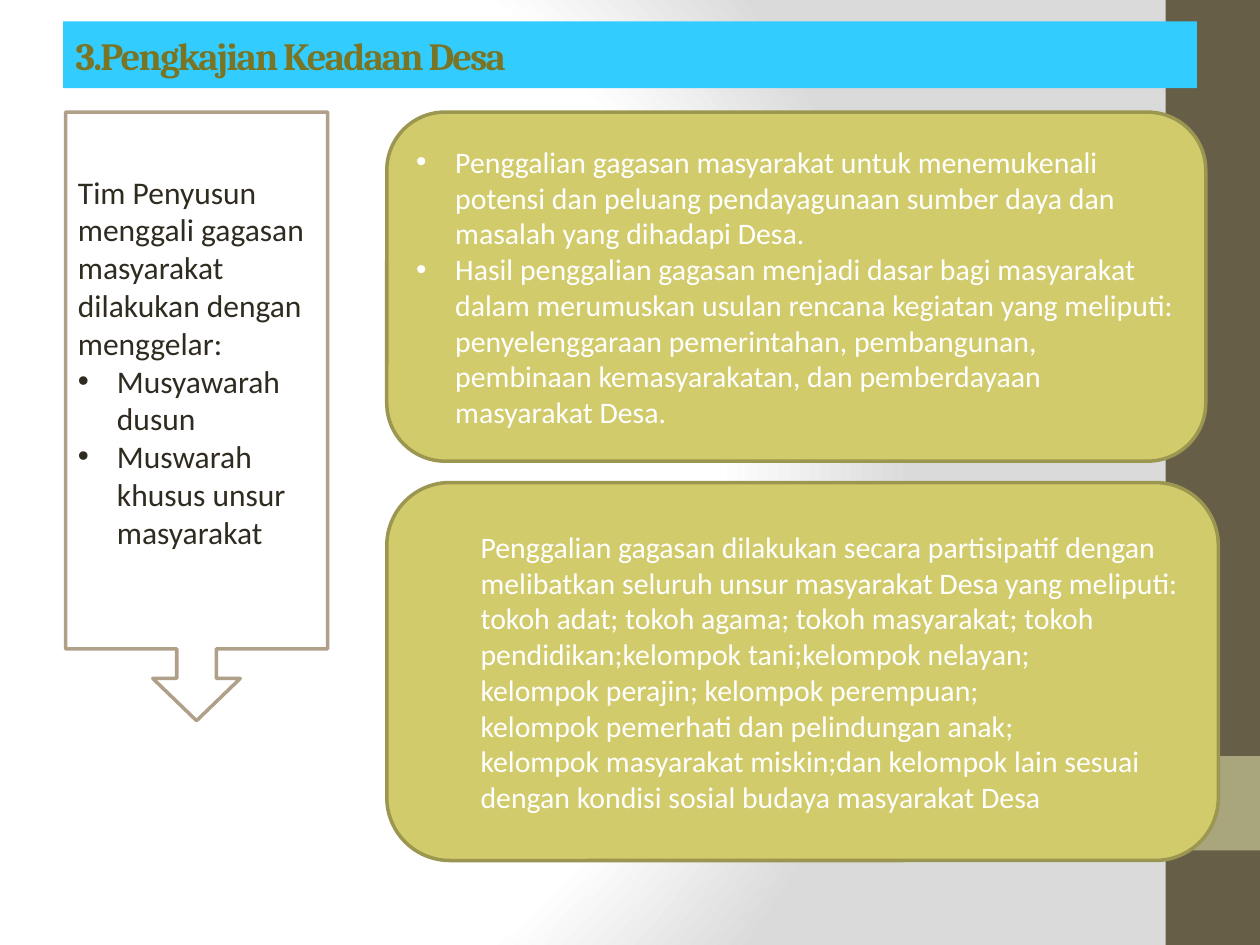
from dataclasses import dataclass

import lxml.etree
import pptx
import pptx.dml.color
import pptx.enum.shapes
import pptx.enum.text
import pptx.oxml
import pptx.oxml.ns
import pptx.util

Inches = pptx.util.Inches
Pt = pptx.util.Pt
SHAPES = pptx.enum.shapes.MSO_SHAPE
qn = pptx.oxml.ns.qn


@dataclass(frozen=True)
class Theme:
    title_font: str = "Cambria"
    body_font: str = "Calibri"
    title_size: int = 22
    callout_size: int = 18
    card_size: int = 17
    title_text: str = "7A7425"
    title_fill: str = "33CCFF"
    side_band: str = "675E47"
    side_block: str = "A9A57C"
    dark: str = "2F2B20"
    white: str = "FFFFFF"
    grey: str = "DADADA"
    callout_line: str = "B1A089"
    card_fill: str = "D2CB6C"
    card_line: str = "9B9650"


THEME = Theme()


@dataclass(frozen=True)
class Para:
    text: str
    bullet: bool = False
    level: int = 0
    indent: float = 0


@dataclass(frozen=True)
class Box:
    kind: int
    at: tuple[float, float, float, float]
    fill: str
    line: str | None = None
    paras: tuple[Para, ...] = ()
    size: int = 0
    color: str = ""
    adjust: tuple[float, ...] = ()
    bottom_inset: float = 0.05


BOXES = (
    Box(SHAPES.RECTANGLE, (9.25, 0, 0.75, 7.5), THEME.side_band),
    Box(SHAPES.RECTANGLE, (9.25, 6, 0.75, 0.75), THEME.side_block),
    Box(
        SHAPES.DOWN_ARROW_CALLOUT, (0.52, 0.89, 2.08, 4.83), THEME.white, THEME.callout_line,
        (
            Para("Tim Penyusun menggali gagasan masyarakat dilakukan dengan menggelar:"),
            Para("Musyawarah dusun", bullet=True),
            Para("Muswarah khusus unsur masyarakat", bullet=True),
        ),
        THEME.callout_size, THEME.dark, (0.151, 0.167, 0.161, 0.882), bottom_inset=0.35,
    ),
    Box(
        SHAPES.ROUNDED_RECTANGLE, (3.07, 0.89, 6.5, 2.77), THEME.card_fill, THEME.card_line,
        (
            Para("Penggalian gagasan masyarakat untuk menemukenali potensi dan peluang "
                 "pendayagunaan sumber daya dan masalah yang dihadapi Desa.", bullet=True),
            Para("Hasil penggalian gagasan menjadi dasar bagi masyarakat dalam merumuskan "
                 "usulan rencana kegiatan yang meliputi: penyelenggaraan pemerintahan, "
                 "pembangunan, pembinaan kemasyarakatan, dan pemberdayaan masyarakat Desa.",
                 bullet=True),
        ),
        THEME.card_size, THEME.white,
    ),
    Box(
        SHAPES.ROUNDED_RECTANGLE, (3.07, 3.83, 6.6, 3), THEME.card_fill, THEME.card_line,
        tuple(Para(text, level=1, indent=0.5) for text in (
            "Penggalian gagasan dilakukan secara partisipatif dengan melibatkan seluruh "
            "unsur masyarakat Desa yang meliputi: tokoh adat; tokoh agama; tokoh "
            "masyarakat; tokoh pendidikan;kelompok tani;kelompok nelayan;",
            "kelompok perajin; kelompok perempuan;",
            "kelompok pemerhati dan pelindungan anak;",
            "kelompok masyarakat miskin;dan kelompok lain sesuai dengan kondisi sosial "
            "budaya masyarakat Desa",
        )),
        THEME.card_size, THEME.white,
    ),
)


def rgb(value: str) -> pptx.dml.color.RGBColor:
    return pptx.dml.color.RGBColor.from_string(value)


def set_format(target, values: dict) -> None:
    for name, value in values.items():
        setattr(target, name, value)


def set_font(font, name: str, size: int, color: str, bold: bool = False) -> None:
    set_format(font, {"name": name, "size": Pt(size), "bold": bold})
    font.color.rgb = rgb(color)


def set_frame(tf, bottom_inset: float = 0.05) -> None:
    set_format(tf, {
        "word_wrap": True,
        "auto_size": pptx.enum.text.MSO_AUTO_SIZE.NONE,
        "vertical_anchor": pptx.enum.text.MSO_ANCHOR.MIDDLE,
        "margin_bottom": Inches(bottom_inset),
    })


def set_background(slide) -> None:
    """Fill the slide with a radial gradient, which needs XML."""
    slide.background.fill.solid()
    bg = slide._element.find(".//" + qn("p:bgPr"))
    stops = ((0, THEME.white), (75, THEME.white), (100, THEME.grey))
    stop_xml = "".join(
        f'<a:gs pos="{pos * 1000}"><a:srgbClr val="{color}"/></a:gs>' for pos, color in stops)
    gradient = pptx.oxml.parse_xml(
        f'<a:gradFill {pptx.oxml.ns.nsdecls("a")} rotWithShape="1"><a:gsLst>{stop_xml}</a:gsLst>'
        '<a:path path="circle"><a:fillToRect l="20000" t="50000" r="100000" b="50000"/></a:path>'
        '</a:gradFill>')
    bg.replace(bg.find(qn("a:solidFill")), gradient)


def add_paragraph_text(p, para: Para, box: Box) -> None:
    p.level = para.level
    p.alignment = pptx.enum.text.PP_ALIGN.LEFT
    pPr = p._p.get_or_add_pPr()
    if para.bullet:
        hang = Inches(0.31)
        pPr.set("marL", str(hang))
        pPr.set("indent", str(-hang))
        lxml.etree.SubElement(pPr, qn("a:buFont"), typeface="Arial")
        lxml.etree.SubElement(pPr, qn("a:buChar"), char="•")
    else:
        pPr.set("marL", str(Inches(para.indent)))
        pPr.set("indent", "0")
    r = p.add_run()
    r.text = para.text
    set_font(r.font, THEME.body_font, box.size, box.color)


def add_box(slide, box: Box) -> None:
    sp = slide.shapes.add_shape(box.kind, *map(Inches, box.at))
    sp.shadow.inherit = False
    sp.fill.solid()
    sp.fill.fore_color.rgb = rgb(box.fill)
    for i, value in enumerate(box.adjust):
        sp.adjustments[i] = value
    if box.line:
        sp.line.color.rgb = rgb(box.line)
        sp.line.width = Pt(2)
    else:
        sp.line.fill.background()
    tf = sp.text_frame
    set_frame(tf, box.bottom_inset)
    for i, para in enumerate(box.paras):
        p = tf.add_paragraph() if i else tf.paragraphs[0]
        add_paragraph_text(p, para, box)


def add_title(slide, text: str) -> None:
    sp = slide.shapes.title
    # Bring the title in front of the side band
    slide.shapes._spTree.append(sp._element)
    names = ("left", "top", "width", "height")
    set_format(sp, dict(zip(names, map(Inches, (0.5, 0.17, 9, 0.53)))))
    sp.fill.solid()
    sp.fill.fore_color.rgb = rgb(THEME.title_fill)
    set_frame(sp.text_frame)
    p = sp.text_frame.paragraphs[0]
    p.alignment = pptx.enum.text.PP_ALIGN.LEFT
    r = p.add_run()
    r.text = text
    set_font(r.font, THEME.title_font, THEME.title_size, THEME.title_text, bold=True)
    r._r.get_or_add_rPr().set("spc", "-100")


def main() -> None:
    prs = pptx.Presentation()
    set_format(prs, {"slide_width": Inches(10), "slide_height": Inches(7.5)})
    slide = prs.slides.add_slide(prs.slide_layouts.get_by_name("Title Only"))
    set_background(slide)
    side_shapes, content = BOXES[:2], BOXES[2:]
    for box in side_shapes:
        add_box(slide, box)
    add_title(slide, "3.Pengkajian Keadaan Desa")
    for box in content:
        add_box(slide, box)
    prs.save("out.pptx")


if __name__ == "__main__":
    main()
